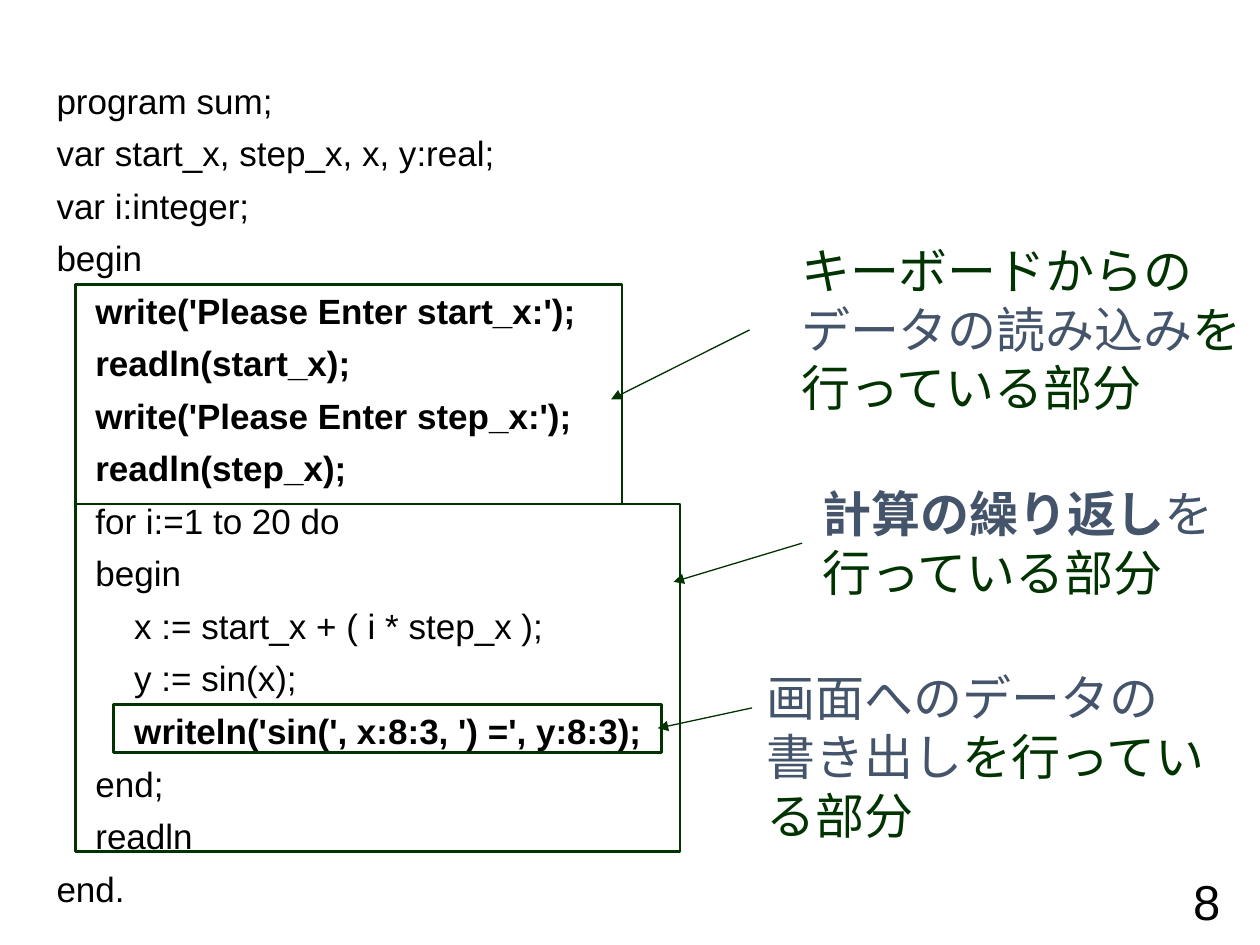
from lxml import etree
from pptx import Presentation
from pptx.dml.color import RGBColor
from pptx.enum.shapes import MSO_CONNECTOR, MSO_SHAPE
from pptx.enum.text import MSO_ANCHOR, PP_ALIGN
from pptx.oxml.ns import qn
from pptx.util import Cm, Pt

RECT = MSO_SHAPE.RECTANGLE
STRAIGHT = MSO_CONNECTOR.STRAIGHT
MIDDLE = MSO_ANCHOR.MIDDLE
RIGHT = PP_ALIGN.RIGHT
FONT = "Arial"
COLORS = {"ink": "000000", "green": "003300", "slate": "44546A"}

CODE = """program sum;
var start_x, step_x, x, y:real;
var i:integer;
begin
    write('Please Enter start_x:');
    readln(start_x);
    write('Please Enter step_x:');
    readln(step_x);
    for i:=1 to 20 do
    begin
        x := start_x + ( i * step_x );
        y := sin(x);
        writeln('sin(', x:8:3, ') =', y:8:3);
    end;
    readln
end.""".split("\n")
BOLD = {4, 5, 6, 7, 12}

NOTES = [
    {"frame": (1.52, 10.16, 12.19, 7.01), "start": (2.46, 0.79), "tip": (-0.13, 1.57),
     "label": (16.33, 9.63, 8.48, 2.64),
     "lines": [[("計算の繰り返し", "slate", True), ("を", "slate", False)],
               [("行っている部分", "green", False)]]},
    {"frame": (1.52, 5.74, 11.02, 4.42), "start": (2.57, 0.91), "tip": (-0.22, 2.31),
     "label": (15.9, 4.72, 9.5, 3.84),
     "lines": [[("キーボードからの", "green", False)],
               [("データの読み込み", "slate", False), ("を", "green", False)],
               [("行っている部分", "green", False)]]},
    {"frame": (2.29, 14.2, 11.05, 0.97), "start": (1.82, 0.07), "tip": (-0.08, 0.48),
     "label": (15.21, 13.34, 9.5, 3.84),
     "lines": [[("画面へのデータの", "slate", False)],
               [("書き出し", "slate", False), ("を行ってい", "green", False)],
               [("る部分", "green", False)]]},
]


def add_text(slide, box, lines, size, wrap=True, gap=0):
    """Place lines of (text, colour, bold) runs in a box."""
    frame = slide.shapes.add_textbox(*map(Cm, box)).text_frame
    frame.word_wrap = wrap
    for row, runs in enumerate(lines):
        para = frame.paragraphs[0] if row == 0 else frame.add_paragraph()
        para.line_spacing = Pt(size * 1.2)
        para.space_before = Pt(gap if row else 0)
        for text, color, bold in runs:
            run = para.add_run()
            run.text = text
            run.font.name = FONT
            run.font.size = Pt(size)
            run.font.bold = bold
            run.font.color.rgb = RGBColor.from_string(COLORS[color])
    return frame


def add_code(slide, box):
    """Place the program listing."""
    lines = [[(text, "ink", row in BOLD)] for row, text in enumerate(CODE)]
    add_text(slide, box, lines, 20, gap=6)


def add_page(slide, box):
    """Place the page number."""
    frame = add_text(slide, box, [[("8", "ink", False)]], 28)
    frame.vertical_anchor = MIDDLE
    frame.paragraphs[0].alignment = RIGHT


def add_arrow(slide, start, tip):
    """Draw an arrow from start to tip."""
    arrow = slide.shapes.add_connector(STRAIGHT, *map(Cm, start + tip))
    arrow.line.color.rgb = RGBColor.from_string(COLORS["green"])
    arrow.line.width = Pt(0.75)
    etree.SubElement(arrow.line._get_or_add_ln(), qn("a:tailEnd"), type="triangle")
    etree.SubElement(arrow._element.spPr, qn("a:effectLst"))


def add_note(slide, frame, start, tip, label, lines):
    """Frame some code and point to it from a label."""
    left, top, width, height = frame
    shape = slide.shapes.add_shape(RECT, *map(Cm, frame))
    shape.shadow.inherit = False
    shape.fill.background()
    shape.line.color.rgb = RGBColor.from_string(COLORS["green"])
    shape.line.width = Pt(1.5)
    ends = [(left + width + x, top + y) for x, y in (start, tip)]
    add_arrow(slide, *ends)
    add_text(slide, label, lines, 28, wrap=False)


def main():
    """Build and save the slide."""
    deck = Presentation()
    deck.slide_width, deck.slide_height = Cm(25.4), Cm(19.05)
    slide = deck.slides.add_slide(deck.slide_layouts[6])
    add_code(slide, (0.89, 1.47, 23.5, 14.81))
    add_page(slide, (19.13, 17.65, 5.72, 1.02))
    for note in NOTES:
        add_note(slide, **note)
    deck.save("out.pptx")


if __name__ == "__main__":
    main()
